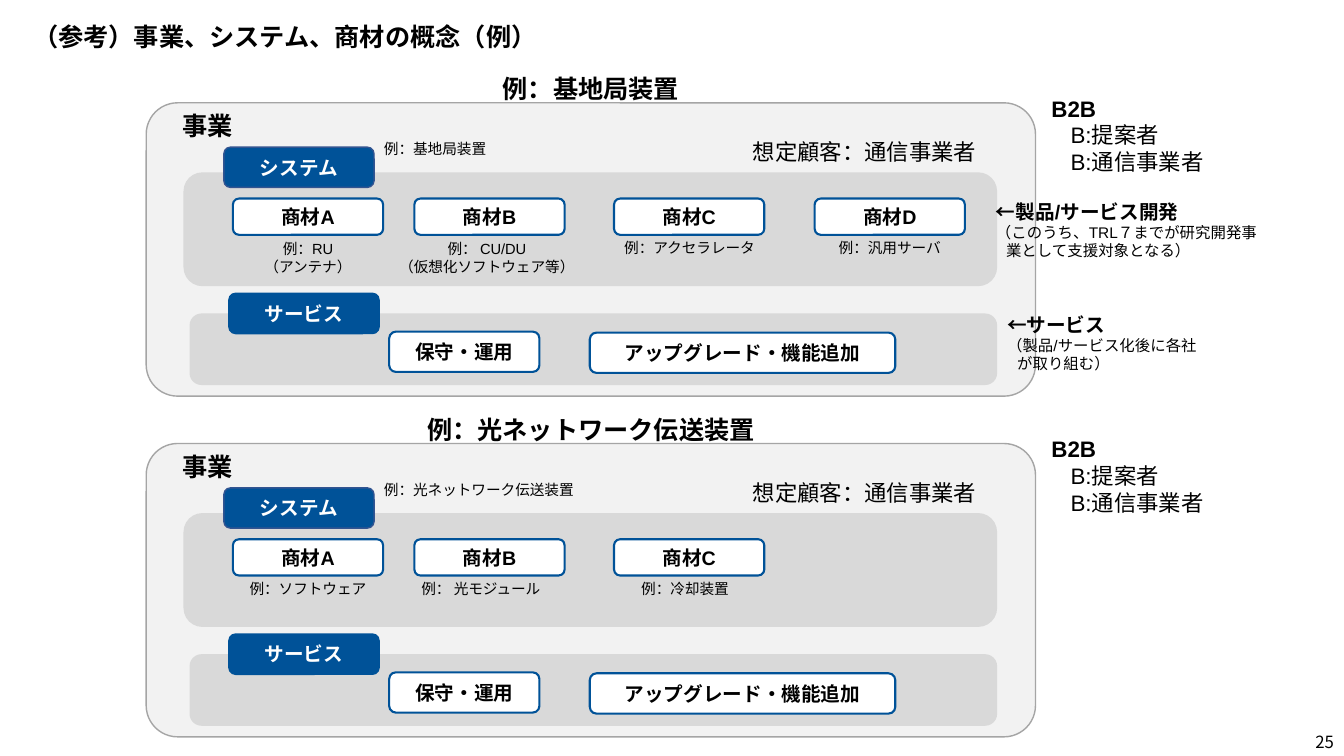
"""Build a slide on the concepts of business, system and product with two examples."""
from lxml import etree
from pptx import Presentation
from pptx import util as u
from pptx.dml.color import RGBColor
from pptx.enum import shapes, text as t
from pptx.oxml import ns

BLACK = RGBColor(0x00, 0x00, 0x00)
WHITE = RGBColor(0xFF, 0xFF, 0xFF)
BLUE = RGBColor(0x00, 0x52, 0x98)
INDIGO = RGBColor(0x32, 0x54, 0x91)
PALE = RGBColor(0xF2, 0xF2, 0xF2)
GREY = RGBColor(0xD9, 0xD9, 0xD9)
EDGE = RGBColor(0xA5, 0xA5, 0xA5)
LATIN, JAPANESE = "Arial", "Noto Sans CJK JP"

TITLE = "（参考）事業、システム、商材の概念（例）"
PAGE_NUMBER = "25"
CUSTOMER = "想定顧客：通信事業者"
PARTIES = ["B2B", "B:提案者", "B:通信事業者"]
PRODUCT_LEFTS = [2.31, 4.11, 6.09, 8.08]
SERVICES = [("保守・運用", 3.86, 2.27, 1.49), ("アップグレード・機能追加", 5.85, 2.28, 3.03)]
EXAMPLES = [
    {
        "name": "例：基地局装置",
        "top": 1.02,
        "font": LATIN,
        "width": 1.61,
        "products": [
            ("商材A", ["例：RU", "（アンテナ）"], 2.46, 1.31, 1.19),
            ("商材B", ["例： CU/DU", "（仮想化ソフトウェア等）"], 3.75, 1.31, 2.16),
            ("商材C", ["例：アクセラレータ"], 6.01, 1.30, 1.66),
            ("商材D", ["例：汎用サーバ"], 8.08, 1.30, 1.49),
        ],
    },
    {
        "name": "例：光ネットワーク伝送装置",
        "top": 4.4,
        "font": JAPANESE,
        "width": 2.14,
        "products": [
            ("商材A", ["例：ソフトウェア"], 2.32, 1.30, 1.47),
            ("商材B", ["例： 光モジュール"], 3.69, 1.30, 2.16),
            ("商材C", ["例：冷却装置"], 5.98, 1.30, 1.63),
        ],
    },
]
REMARKS = [
    (["←製品/サービス開発", "（このうち、TRL７までが研究開発事業として支援対象となる）"], 9.78, 1.93, 2.82),
    (["←サービス", "（製品/サービス化後に各社が取り組む）"], 9.89, 3.05, 2.09),
]


def write(box, lines, size=14, bold=False, color=BLACK, font=LATIN, align="LEFT",
          anchor="TOP", rest=None, margin=0, indent=0):
    """Fill a box; lines after the first may have their own size and indents."""
    frame = box.text_frame
    frame.word_wrap = True
    frame.vertical_anchor = t.MSO_ANCHOR[anchor]
    for index, line in enumerate(lines):
        para = frame.paragraphs[0] if index == 0 else frame.add_paragraph()
        para.alignment = t.PP_ALIGN[align]
        later = bool(index and rest)
        if later:
            properties = para._p.get_or_add_pPr()
            properties.set("marL", str(u.Inches(margin)))
            properties.set("indent", str(u.Inches(indent)))
        span = para.add_run()
        span.text = line
        span.font.name = font
        span.font.size = u.Pt(rest if later else size)
        span.font.bold = bold and not later
        span.font.color.rgb = color
        east_asian = etree.SubElement(span.font._element, ns.qn("a:ea"))
        east_asian.set("typeface", JAPANESE)


def add_label(page, lines, left, top, width, height, **style):
    box = page.shapes.add_textbox(*map(u.Inches, (left, top, width, height)))
    write(box, lines, **style)


def add_panel(page, left, top, width, height, fill, line=None, weight=1, corner=0.16667,
              label=None, color=BLACK):
    box = page.shapes.add_shape(shapes.MSO_SHAPE.ROUNDED_RECTANGLE,
                                *map(u.Inches, (left, top, width, height)))
    box.shadow.inherit = False
    box.adjustments[0] = corner
    box.fill.solid()
    box.fill.fore_color.rgb = fill
    if line is None:
        box.line.fill.background()
    else:
        box.line.color.rgb = line
        box.line.width = u.Pt(weight)
    if label:
        write(box, [label], bold=True, color=color, align="CENTER", anchor="MIDDLE")


def add_example(page, example):
    top = example["top"]
    add_panel(page, 1.45, top, 8.82, 2.91, PALE, EDGE, corner=0.107)
    add_label(page, ["事業"], 1.71, top + 0.03, 1.19, 0.4, size=18, bold=True)
    add_panel(page, 1.82, top + 0.69, 8.07, 1.13, GREY)
    add_panel(page, 1.88, top + 2.09, 8.01, 0.71, GREY)
    for left, product in zip(PRODUCT_LEFTS, example["products"]):
        name, caption, caption_left, drop, caption_width = product
        add_panel(page, left, top + 0.95, 1.49, 0.36, WHITE, BLUE, 1.5, label=name)
        add_label(page, caption, caption_left, top + drop, caption_width,
                  0.28 if len(caption) == 1 else 0.45, size=10.5, align="CENTER")
    add_panel(page, 2.22, top + 0.44, 1.49, 0.4, BLUE, INDIGO, label="システム", color=WHITE)
    add_panel(page, 2.27, top + 1.89, 1.49, 0.4, BLUE, BLUE, label="サービス", color=WHITE)
    for name, left, drop, width in SERVICES:
        add_panel(page, left, top + drop, width, 0.4, WHITE, BLUE, 1.5, label=name)
    add_label(page, [example["name"]], 3.71, top + 0.32, example["width"], 0.29,
              size=10.5, font=example["font"])
    add_label(page, [CUSTOMER], 7.37, top + 0.3, 2.76, 0.37, size=16)
    add_label(page, [example["name"]], 1.45, top - 0.34, 8.82, 0.4,
              size=18, bold=True, align="CENTER")
    add_label(page, PARTIES, 10.33, top - 0.13, 2.09, 0.91,
              size=16, bold=True, rest=16, margin=0.19)


def main():
    deck = Presentation()
    deck.slide_width, deck.slide_height = u.Inches(13.33), u.Inches(7.5)
    page = deck.slides.add_slide(deck.slide_layouts[6])
    add_label(page, [PAGE_NUMBER], 12.48, 7.21, 0.85, 0.29, size=12, font=JAPANESE,
              align="RIGHT", anchor="MIDDLE")
    add_label(page, [TITLE], 0.23, 0.16, 5.63, 0.4, size=18, bold=True, font=JAPANESE)
    for example in EXAMPLES:
        add_example(page, example)
    for lines, left, top, width in REMARKS:
        add_label(page, lines, left, top, width, 0.71, bold=True, rest=11,
                  margin=0.1, indent=-0.1)
    deck.save("out.pptx")


if __name__ == "__main__":
    main()
